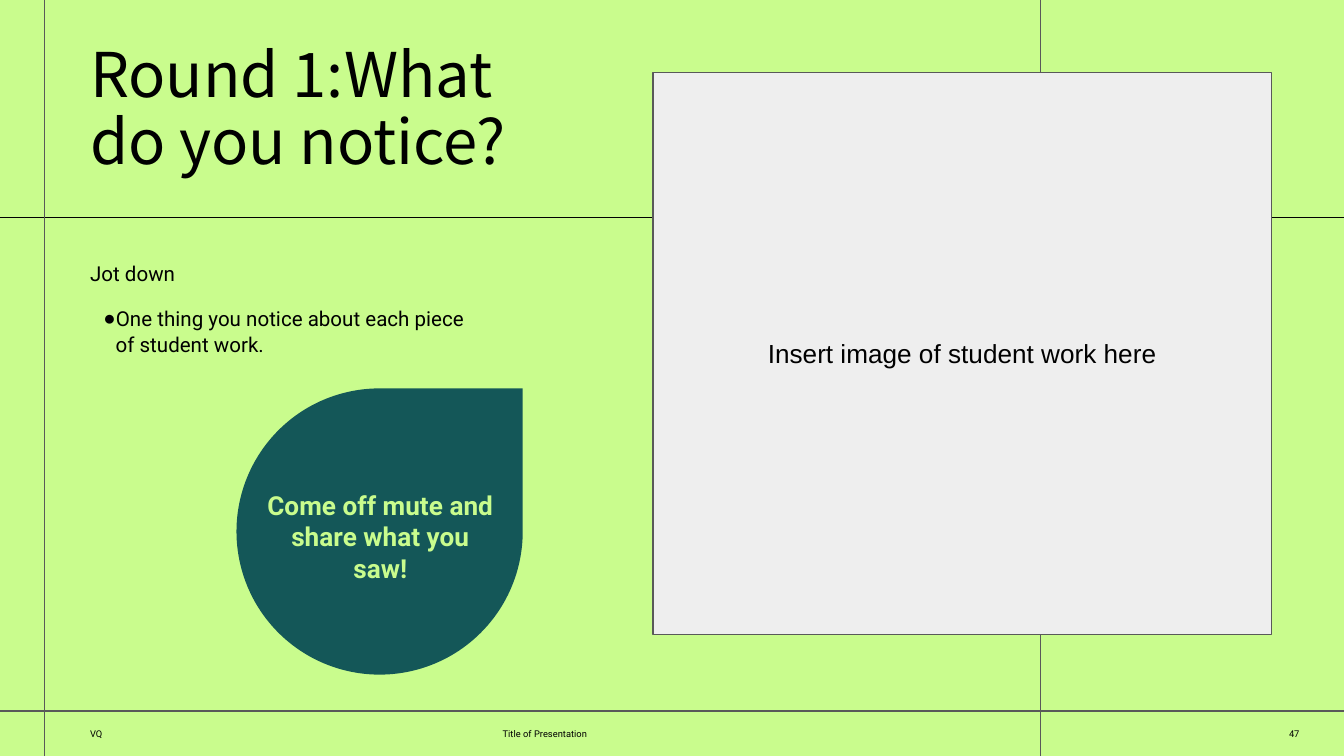
import pptx
import pptx.dml.color
import pptx.enum.shapes
import pptx.enum.text
import pptx.oxml
import pptx.oxml.ns
import pptx.util
from pptx.util import Inches

COLORS = {
    "lime": "C9FC8D",
    "teal": "145758",
    "panel": "EEEEEE",
    "grid": "595959",
    "ink": "000000",
}
WIDTH = 10
HEIGHT = WIDTH * 9 / 16
MARGIN = 0.67
FOOTER_TOP = 5.29
ALIGN = pptx.enum.text.PP_ALIGN
ANCHOR = pptx.enum.text.MSO_ANCHOR
SHAPE = pptx.enum.shapes.MSO_SHAPE


def color(name):
    return pptx.dml.color.RGBColor.from_string(COLORS[name])


def place(shape, left, top, width, height):
    shape.left, shape.top = Inches(left), Inches(top)
    shape.width, shape.height = Inches(width), Inches(height)


def write(shape, text, *, size, font="Roboto", ink="ink", bold=False,
          align=ALIGN.LEFT, anchor=ANCHOR.TOP, insets=(0, 0, 0, 0),
          spacing=1.0, before=0):
    """Put one formatted paragraph into a shape and return it."""
    frame = shape.text_frame
    frame.word_wrap = True
    frame.auto_size = pptx.enum.text.MSO_AUTO_SIZE.NONE
    frame.vertical_anchor = anchor
    (frame.margin_left, frame.margin_top,
     frame.margin_right, frame.margin_bottom) = map(Inches, insets)
    paragraph = frame.paragraphs[0]
    paragraph.text = text
    paragraph.alignment = align
    paragraph.line_spacing = spacing
    paragraph.space_before = pptx.util.Pt(before)
    for run in paragraph.runs:
        run.font.name = font
        run.font.size = pptx.util.Pt(size)
        run.font.bold = bold
        run.font.color.rgb = color(ink)
    return paragraph


def set_bullet(paragraph, char=None, indent=0):
    """Give a paragraph a hanging bullet, or none without a character."""
    props = paragraph._p.get_or_add_pPr()
    props.set("marL", str(Inches(indent)))
    props.set("indent", str(-Inches(indent)))
    marks = ["<a:buNone {}/>"]
    if char:
        marks = [
            f'<a:buClr {{}}><a:srgbClr val="{COLORS["ink"]}"/></a:buClr>',
            '<a:buFont {} typeface="Arial"/>',
            f'<a:buChar {{}} char="{char}"/>',
        ]
    for mark in marks:
        props.append(pptx.oxml.parse_xml(mark.format(pptx.oxml.ns.nsdecls("a"))))


def add_rule(slide, x1, y1, x2, y2, ink="grid"):
    rule = slide.shapes.add_connector(
        pptx.enum.shapes.MSO_CONNECTOR.STRAIGHT,
        Inches(x1), Inches(y1), Inches(x2), Inches(y2))
    rule.line.color.rgb = color(ink)
    rule.line.width = pptx.util.Pt(0.75)
    rule._element.spPr.append(
        pptx.oxml.parse_xml(f'<a:effectLst {pptx.oxml.ns.nsdecls("a")}/>'))


def add_label(slide, box, text, **style):
    label = slide.shapes.add_textbox(*map(Inches, box))
    write(label, text, **style)


def add_panel(slide, kind, box, fill, outline=None):
    panel = slide.shapes.add_shape(kind, *map(Inches, box))
    panel.shadow.inherit = False
    panel.fill.solid()
    panel.fill.fore_color.rgb = color(fill)
    if outline:
        panel.line.color.rgb = color(outline)
        panel.line.width = pptx.util.Pt(0.75)
    else:
        panel.line.fill.background()
    return panel


def main():
    deck = pptx.Presentation()
    deck.slide_width, deck.slide_height = Inches(WIDTH), Inches(HEIGHT)
    slide = deck.slides.add_slide(deck.slide_layouts.get_by_name("Two Content"))
    slide.background.fill.solid()
    slide.background.fill.fore_color.rgb = color("lime")

    # Grid lines
    add_rule(slide, 0, FOOTER_TOP, WIDTH, FOOTER_TOP)
    add_rule(slide, 0, 1.62, WIDTH, 1.62, ink="ink")
    for x in (0.33, 7.74):
        add_rule(slide, x, 0, x, HEIGHT)

    # Footer
    for left, width, text, align in (
            (MARGIN, 2.93, "VQ", ALIGN.LEFT),
            (3.74, 2.9, "Title of Presentation", ALIGN.LEFT),
            (6.74, 2.93, "47", ALIGN.RIGHT)):
        add_label(slide, (left, FOOTER_TOP, width, 0.34), text, size=5,
                  align=align, anchor=ANCHOR.MIDDLE)

    # Title and instructions
    title, prompt, task = slide.placeholders
    place(title, MARGIN, 0.33, 5.96, 1)
    write(title, "Round 1:What \vdo you notice?", size=33,
          font="Noto Sans CJK KR", spacing=0.9)
    place(prompt, MARGIN, 1.93, 2.86, 0.19)
    set_bullet(write(prompt, "Jot down", size=11, spacing=1.05))
    place(task, MARGIN, 2.27, 2.86, 0.38)
    notice = write(task, "One thing you notice about each piece of student work.",
                   size=11, spacing=1.05, before=12, insets=(0.1, 0, 0, 0))
    set_bullet(notice, "●", 0.09)

    # Call to share
    add_panel(slide, SHAPE.TEAR, (1.76, 2.89, 2.13, 2.13), "teal")
    add_label(slide, (1.98, 3.64, 1.7, 0.71),
              "Come off mute and share what you saw!",
              size=14, ink="lime", bold=True, align=ALIGN.CENTER)

    # Space for student work
    work = add_panel(slide, SHAPE.RECTANGLE, (4.86, 0.54, 4.6, 4.18),
                     "panel", outline="grid")
    write(work, "Insert image of student work here", size=14, font="Arial",
          align=ALIGN.CENTER, anchor=ANCHOR.MIDDLE, insets=(0.1,) * 4)

    deck.save("out.pptx")


if __name__ == "__main__":
    main()
